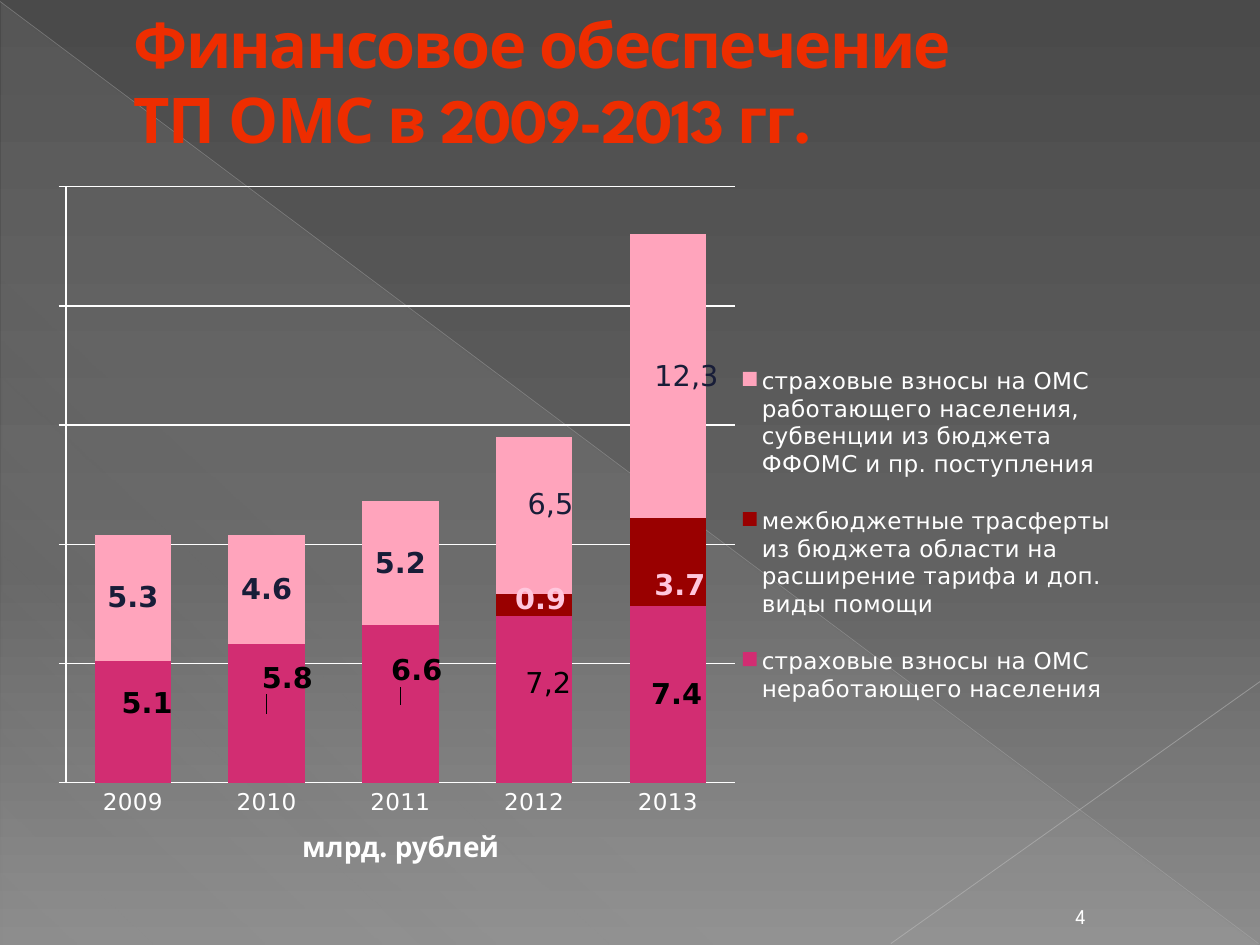
"""Build the slide on compulsory medical insurance funding, 2009-2013."""
from lxml import etree
from pptx import Presentation
from pptx import util as u
from pptx.chart.data import CategoryChartData
from pptx.dml.color import RGBColor
from pptx.enum import chart as ch
from pptx.enum import shapes, text
from pptx.oxml import parse_xml
from pptx.oxml.ns import nsdecls, qn

TITLE = ("Финансовое обеспечение", "ТП ОМС в 2009-2013 гг.")
UNIT = "млрд. рублей"
PAGE_NUMBER = "4"
YEARS = ("2009", "2010", "2011", "2012", "2013")
SERIES = [
    {"name": "страховые взносы на ОМС неработающего населения",
     "values": (5.1, 5.8, 6.6, 7, 7.4), "fill": "D22D72", "label": "000000",
     "custom": {3: "7,2"},
     "shifts": {0: (1.3, -2.6), 1: (1.9, -4.9), 2: (1.5, -4.6), 3: (1.3, -2.2), 4: (0.8, 0)}},
    {"name": "межбюджетные трасферты из бюджета области на расширение тарифа и доп. виды помощи",
     "values": (None, None, None, 0.9, 3.7), "fill": "990000", "label": "FFC7DD",
     "custom": {}, "shifts": {3: (0.6, -0.8), 4: (1.1, 3.3)}},
    {"name": "страховые взносы на ОМС работающего населения, "
             "субвенции из бюджета ФФОМС и пр. поступления",
     "values": (5.3, 4.6, 5.2, 6.6, 11.9), "fill": "FFA4BC", "label": "181D38",
     "custom": {3: "6,5", 4: "12,3"}, "shifts": {3: (1.5, -1.5), 4: (1.7, 0)}},
]
THEME = {
    "font": "League Spartan", "chart_font": "DejaVu Sans",
    "title": "EE2D00", "outline": "B12761", "light": "FFFFFF",
    "title_size": 36, "unit_size": 16, "label_size": 16.4, "axis_size": 13.2, "number_size": 12,
    "background": ((0, "4A4A4A", 100), (60, "626262", 100), (100, "8C8C8C", 100)),
    "glow": ((0, "D2D2D2", 10), (70, "D2D2D2", 8), (100, "D2D2D2", 1)),
}
RAYS = [
    ((0, 0.03, 25.37, 19.02), "BFBFBF", 0.39, 35),
    ((25.4, 13.74, 17.96, 19.02), "C6C6C6", 0.47, 45),
]


def cm(*lengths):
    return [u.Cm(length) for length in lengths]


def style(font, size, color, bold=False, name=THEME["font"]):
    font.size, font.bold, font.name = u.Pt(size), bold, name
    font.color.rgb = RGBColor.from_string(color)


def set_gradient(fill, element, stops, angle):
    fill.gradient()
    gradient = element.find(".//" + qn("a:gradFill"))
    stop_list = gradient.find(qn("a:gsLst"))
    for old in list(stop_list):
        stop_list.remove(old)
    for position, color, opacity in stops:
        stop = etree.SubElement(stop_list, qn("a:gs"), pos=str(position * 1000))
        tint = etree.SubElement(stop, qn("a:srgbClr"), val=color)
        etree.SubElement(tint, qn("a:alpha"), val=str(opacity * 1000))
    gradient.find(qn("a:lin")).set("ang", str(angle * 60000))


def set_layout(parent, index, **parts):
    for old in parent.findall(qn("c:layout")):
        parent.remove(old)
    items = "".join(f'<c:{key} val="{value}"/>' for key, value in parts.items())
    parent.insert(index, parse_xml(
        f'<c:layout {nsdecls("c")}><c:manualLayout>{items}</c:manualLayout></c:layout>'))


def add_backdrop(slide):
    set_gradient(slide.background.fill, slide.element, THEME["background"], 90)
    glow = slide.shapes.add_shape(
        shapes.MSO_SHAPE.RIGHT_TRIANGLE, *cm(0.03, 0.05, 25.35, 19))
    glow.shadow.inherit = False
    set_gradient(glow.fill, glow.element, THEME["glow"], 133)
    glow.line.fill.background()
    for ends, color, width, opacity in RAYS:
        ray = slide.shapes.add_connector(shapes.MSO_CONNECTOR.STRAIGHT, *cm(*ends))
        ray.line.width = u.Pt(width)
        ray.line.color.rgb = RGBColor.from_string(color)
        tint = ray.element.find(".//" + qn("a:srgbClr"))
        etree.SubElement(tint, qn("a:alpha"), val=str(opacity * 1000))
        etree.SubElement(ray.element.spPr, qn("a:effectLst"))


def fill_title(slide):
    title = slide.shapes.title
    slide.shapes[-1].element.addnext(title.element)
    title.left, title.top, title.width, title.height = cm(1.09, 0.13, 20.29, 3)
    frame = title.text_frame
    frame.word_wrap = True
    frame.auto_size = text.MSO_AUTO_SIZE.NONE
    frame.vertical_anchor = text.MSO_ANCHOR.MIDDLE
    para = frame.paragraphs[0]
    para.alignment = text.PP_ALIGN.LEFT
    properties = para._p.get_or_add_pPr()
    properties.set("marL", str(u.Cm(1.35)))
    properties.set("indent", "0")
    for number, line in enumerate(TITLE):
        if number:
            para.add_line_break()
        span = para.add_run()
        span.text = line
        style(span.font, THEME["title_size"], THEME["title"], True)
        look = span._r.get_or_add_rPr()
        look.set("spc", "-100")
        look.insert(0, parse_xml(
            f'<a:ln {nsdecls("a")} w="{u.Pt(0.5)}"><a:solidFill>'
            f'<a:srgbClr val="{THEME["outline"]}"/></a:solidFill></a:ln>'))


def add_page_number(slide):
    box = slide.shapes.add_textbox(*cm(21.08, 18.01, 1.4, 0.84))
    frame = box.text_frame
    frame.word_wrap = True
    frame.vertical_anchor = text.MSO_ANCHOR.BOTTOM
    para = frame.paragraphs[0]
    para.alignment = text.PP_ALIGN.CENTER
    span = para.add_run()
    span.text = PAGE_NUMBER
    style(span.font, THEME["number_size"], THEME["light"])


def format_axes(chart):
    light = RGBColor.from_string(THEME["light"])
    years, amounts = chart.category_axis, chart.value_axis
    amounts.minimum_scale, amounts.maximum_scale, amounts.major_unit = 0, 25, 5
    amounts.tick_label_position = ch.XL_TICK_LABEL_POSITION.NONE
    amounts.major_tick_mark = ch.XL_TICK_MARK.CROSS
    years.major_tick_mark = ch.XL_TICK_MARK.NONE
    for line in (years.format.line, amounts.format.line, amounts.major_gridlines.format.line):
        line.color.rgb, line.width = light, u.Pt(0.75)
    style(years.tick_labels.font, THEME["axis_size"], THEME["light"], name=THEME["chart_font"])
    span = years.axis_title.text_frame.paragraphs[0].add_run()
    span.text = UNIT
    style(span.font, THEME["unit_size"], THEME["light"], True)


def format_series(series, element, row):
    series.format.fill.solid()
    series.format.fill.fore_color.rgb = RGBColor.from_string(row["fill"])
    look = (THEME["label_size"], row["label"])
    labels = series.data_labels
    labels.show_value = True
    style(labels.font, *look, True, THEME["chart_font"])
    for index, (right, down) in row["shifts"].items():
        label = series.points[index].data_label
        if index in row["custom"]:
            span = label.text_frame.paragraphs[0].add_run()
            span.text = row["custom"][index]
            style(span.font, *look, False, THEME["chart_font"])
        else:
            style(label.font, *look, True, THEME["chart_font"])
        node = element.xpath(f'c:dLbls/c:dLbl[c:idx/@val="{index}"]')[0]
        set_layout(node, 1, x=right / 100, y=down / 100)


def add_funding_chart(slide):
    data = CategoryChartData()
    data.categories = YEARS
    for row in SERIES:
        data.add_series(row["name"], row["values"])
    chart = slide.shapes.add_chart(
        ch.XL_CHART_TYPE.COLUMN_STACKED, *cm(0.89, 3.33, 22.1, 14.48), data).chart
    style(chart.font, 10, THEME["light"])
    chart.has_title = False
    plot = chart.plots[0]
    plot.gap_width, plot.overlap, plot.vary_by_categories = 75, 100, False
    format_axes(chart)
    for series, element, row in zip(plot.series, chart.element.xpath(".//c:ser"), SERIES):
        format_series(series, element, row)
    chart.has_legend = True
    legend = chart.legend
    legend.position = ch.XL_LEGEND_POSITION.RIGHT
    legend.include_in_layout = False
    style(legend.font, THEME["axis_size"], THEME["light"], name=THEME["chart_font"])
    set_layout(chart.element.xpath(".//c:legend")[0], 1,
               xMode="edge", yMode="edge", x=0.63, y=0.24, w=0.35, h=0.55)
    set_layout(chart.element.xpath(".//c:plotArea")[0], 0, layoutTarget="inner",
               xMode="edge", yMode="edge", x=0.02, y=0.03, w=0.61, h=0.83)


def main():
    deck = Presentation()
    deck.slide_width, deck.slide_height = cm(25.4, 19.05)
    slide = deck.slides.add_slide(deck.slide_layouts[5])
    add_backdrop(slide)
    fill_title(slide)
    add_page_number(slide)
    add_funding_chart(slide)
    deck.save("out.pptx")


if __name__ == "__main__":
    main()
